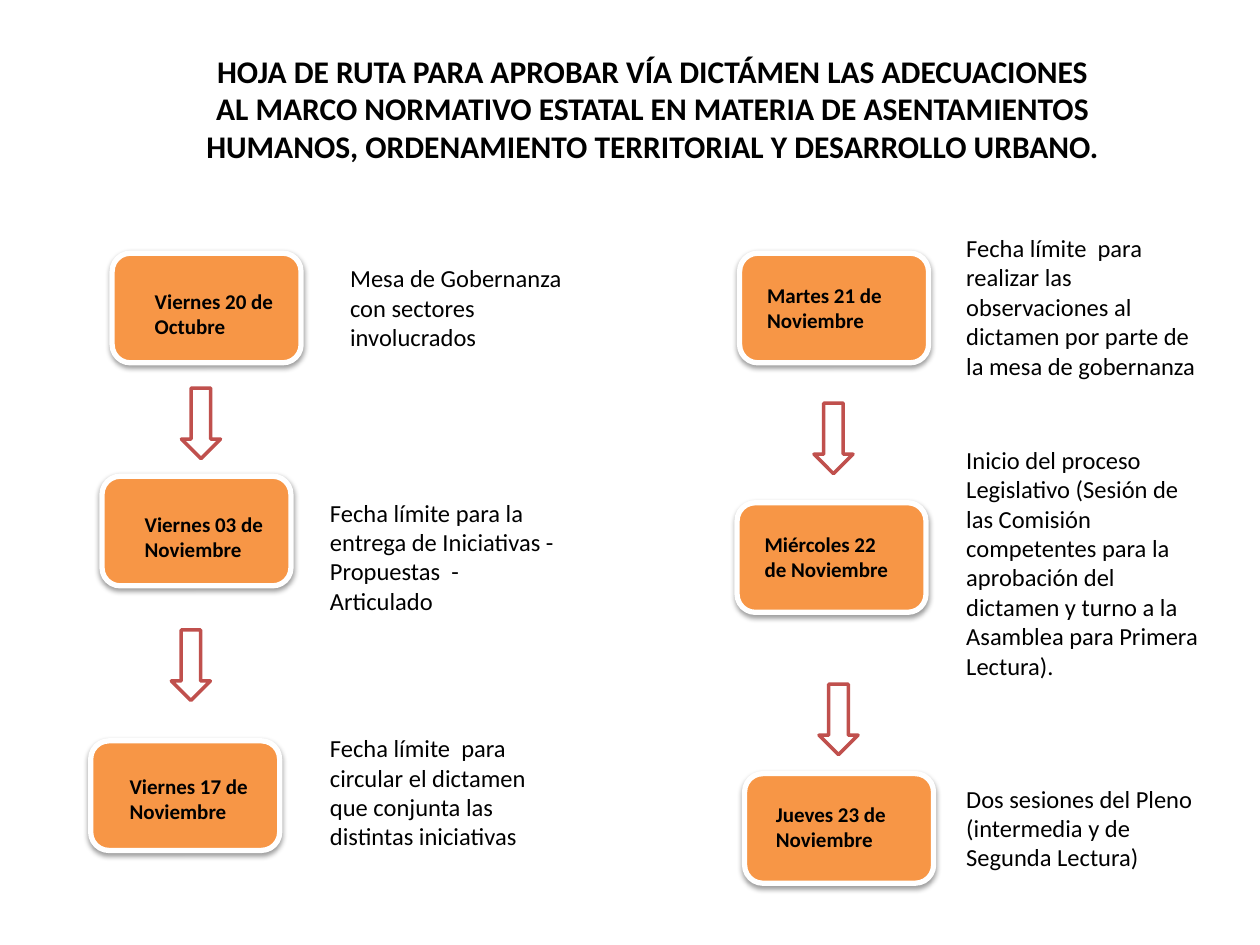
"""Build the roadmap slide: dated steps in two columns joined by down arrows."""
from lxml.etree import SubElement
from pptx import Presentation
from pptx.dml.color import RGBColor
from pptx.enum.shapes import MSO_SHAPE as Shape
from pptx.enum.text import MSO_ANCHOR as Anchor, MSO_AUTO_SIZE as AutoSize, PP_ALIGN as Align
from pptx.oxml.ns import qn
from pptx.util import Inches, Pt

BLACK = RGBColor(0x00, 0x00, 0x00)
WHITE = RGBColor(0xFF, 0xFF, 0xFF)
ORANGE = RGBColor(0xF7, 0x96, 0x46)
RED = RGBColor(0xC0, 0x50, 0x4D)
FONT = "Calibri"

COLS, ROWS = 100, 75
CELL = Inches(0.1)
CARD_W, CARD_H = 15, 8.7
LABEL_W, LABEL_H = 12.6, 5
NOTE_W = 20.5
ARROW_W, ARROW_H = 3.1, 5.6

TITLE = ("HOJA DE RUTA PARA APROBAR VÍA DICTÁMEN LAS ADECUACIONES AL MARCO NORMATIVO "
         "ESTATAL EN MATERIA DE ASENTAMIENTOS HUMANOS, ORDENAMIENTO TERRITORIAL Y "
         "DESARROLLO URBANO.")

# date, card corner, label offset in card, note, note corner and height
STEPS = [
    ("Viernes 20 de Octubre", (8.9, 20.1), (2.4, 2.3),
     "Mesa de Gobernanza con sectores involucrados", (26.8, 20.4), 8.1),
    ("Viernes 03 de Noviembre", (8.1, 37.8), (2.4, 2.3),
     "Fecha límite para la entrega de Iniciativas - Propuestas  - Articulado",
     (25.2, 39), 10.4),
    ("Viernes 17 de Noviembre", (7.2, 58.8), (2.1, 2.1),
     "Fecha límite  para circular el dictamen que conjunta las distintas iniciativas",
     (25.2, 57.7), 10.4),
    ("Martes 21 de Noviembre", (58.7, 20.1), (1.2, 1.8),
     "Fecha límite  para realizar las observaciones al dictamen por parte de la mesa "
     "de gobernanza", (75.7, 18), 12.8),
    ("Miércoles 22 de Noviembre", (58.5, 39.9), (1.2, 1.8),
     "Inicio del proceso Legislativo (Sesión de las Comisión competentes para la "
     "aprobación del dictamen y turno a la Asamblea para Primera Lectura).",
     (75.7, 34.8), 19.9),
    ("Jueves 23 de Noviembre", (59.1, 61.4), (1.5, 1.7),
     "Dos sesiones del Pleno (intermedia y de Segunda Lectura)", (75.7, 61.7), 8.1),
]
ARROWS = [(14.4, 30.8), (13.6, 50), (64.6, 32), (65, 54.3)]


def cells(*values):
    """Convert grid units to slide lengths."""
    return [round(v * CELL) for v in values]


def write(tf, text, size, bold=False, align=Align.LEFT):
    """Fill a text frame with one formatted paragraph."""
    tf.text = text
    tf.word_wrap = True
    tf.auto_size = AutoSize.SHAPE_TO_FIT_TEXT
    tf.vertical_anchor = Anchor.TOP
    p = tf.paragraphs[0]
    p.alignment = align
    font = p.runs[0].font
    font.name, font.size, font.bold = FONT, Pt(size), bold
    font.color.rgb = BLACK


def add_text(shapes, text, x, y, w, h, size, bold=False):
    """Add a wrapped text box."""
    write(shapes.add_textbox(*cells(x, y, w, h)).text_frame, text, size, bold)


def add_outlined(shapes, kind, x, y, w, h, fill, line, weight):
    """Add a preset shape with a solid fill, an outline and no shadow."""
    sp = shapes.add_shape(kind, *cells(x, y, w, h))
    sp.fill.solid()
    sp.fill.fore_color.rgb = fill
    sp.line.color.rgb = line
    sp.line.width = Pt(weight)
    sp.shadow.inherit = False
    return sp


def add_shadow(sp):
    """Drop a soft black shadow straight below a shape."""
    effects = sp._element.spPr.find(qn("a:effectLst"))
    shadow = SubElement(effects, qn("a:outerShdw"), blurRad=str(Pt(3.1)),
                        dist=str(Pt(1.6)), dir="5400000", rotWithShape="0")
    color = SubElement(shadow, qn("a:srgbClr"), val=str(BLACK))
    SubElement(color, qn("a:alpha"), val="38000")


def add_step(s, date, card, offset, note, corner, note_h):
    """Add a dated card grouped with its label, and the note beside it."""
    shapes = s.shapes.add_group_shape().shapes
    add_shadow(add_outlined(shapes, Shape.ROUNDED_RECTANGLE, *card, CARD_W, CARD_H,
                            ORANGE, WHITE, 3))
    add_text(shapes, date, card[0] + offset[0], card[1] + offset[1],
             LABEL_W, LABEL_H, 12, True)
    add_text(s.shapes, note, *corner, NOTE_W, note_h, 14)


def add_title(s):
    """Place and format the title placeholder."""
    title = s.shapes.title
    title.left, title.top, title.width, title.height = cells(15, 3.6, 73.6, 10.1)
    write(title.text_frame, TITLE, 18, True, Align.CENTER)


def main():
    """Build and save the slide."""
    prs = Presentation()
    prs.slide_width, prs.slide_height = cells(COLS, ROWS)
    s = prs.slides.add_slide(prs.slide_layouts[5])
    add_title(s)
    for step in STEPS:
        add_step(s, *step)
    for x, y in ARROWS:
        add_outlined(s.shapes, Shape.DOWN_ARROW, x, y, ARROW_W, ARROW_H, WHITE, RED, 2)
    prs.save("out.pptx")


if __name__ == "__main__":
    main()
